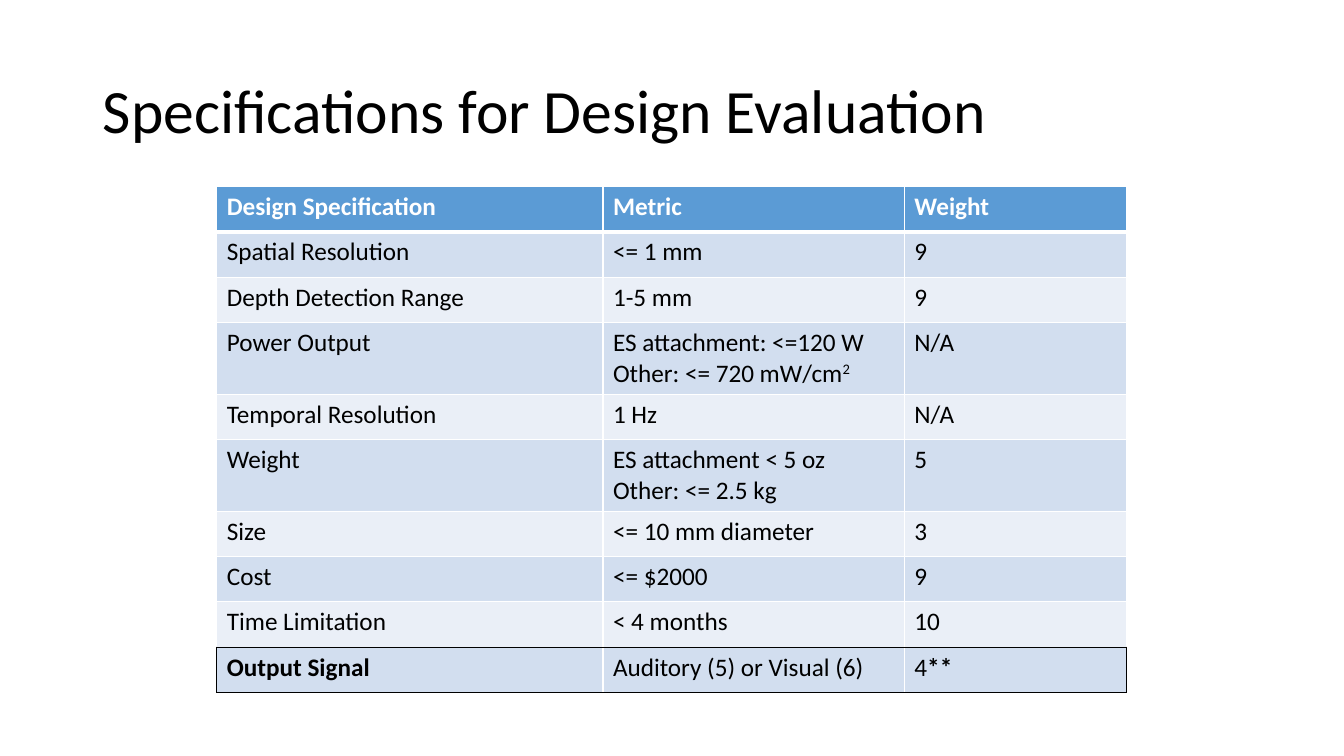
import pptx
import pptx.dml.color
import pptx.enum.text
import pptx.oxml
import pptx.oxml.ns
import pptx.util

EMU_PER_PX = 9144  # 100 px to the inch
FONT = "Calibri"
COLORS = {
    "text": "000000",
    "header_text": "FFFFFF",
    "header": "5B9BD5",
    "odd_row": "D2DEEF",
    "even_row": "EAEFF7",
    "grid": "FFFFFF",
    "highlight": "000000",
}
COLUMN_WIDTHS = [383, 299, 220]
ROW_HEIGHT = 45

# A cell is text with one paragraph per line, or a list of paragraphs;
# a paragraph is text or a list of (text, style) runs.
SPECIFICATIONS = [
    ["Design Specification", "Metric", "Weight"],
    ["Spatial Resolution", "<= 1 mm", "9"],
    ["Depth Detection Range", "1-5 mm", "9"],
    ["Power Output",
     ["ES attachment: <=120 W", [("Other: <= 720 mW/cm", ""), ("2", "superscript")]],
     "N/A"],
    ["Temporal Resolution", "1 Hz", "N/A"],
    ["Weight", "ES attachment < 5 oz\nOther: <= 2.5 kg", "5"],
    ["Size", "<= 10 mm diameter", "3"],
    ["Cost", "<= $2000", "9"],
    ["Time Limitation", "< 4 months", "10"],
    [[[("Output Signal", "bold")]], "Auditory (5) or Visual (6)",
     [[("4", ""), ("**", "bold")]]],
]


def px(length):
    return pptx.util.Emu(length * EMU_PER_PX)


def rgb(name):
    return pptx.dml.color.RGBColor.from_string(COLORS[name])


def format_font(font, size, color):
    font.name = FONT
    font.size = pptx.util.Pt(size)
    font.color.rgb = rgb(color)


def add_title(slide, text, left, top, width, height):
    title = slide.shapes.title
    title.left, title.top = px(left), px(top)
    title.width, title.height = px(width), px(height)
    title.text_frame.vertical_anchor = pptx.enum.text.MSO_ANCHOR.MIDDLE
    heading = title.text_frame.paragraphs[0]
    heading.text = text
    heading.alignment = pptx.enum.text.PP_ALIGN.LEFT
    heading.line_spacing = 0.9
    format_font(heading.font, 44, "text")


def fill_text(cell, content, is_header):
    lines = content.split("\n") if isinstance(content, str) else content
    for index, line in enumerate(lines):
        frame = cell.text_frame
        paragraph = frame.add_paragraph() if index else frame.paragraphs[0]
        format_font(paragraph.font, 18, "header_text" if is_header else "text")
        paragraph.font.bold = is_header
        for text, style in [(line, "")] if isinstance(line, str) else line:
            run = paragraph.add_run()
            run.text = text
            if style == "bold":
                run.font.bold = True
            elif style == "superscript":
                run.font._element.set("baseline", "30000")


def set_border(cell, side, color, points):
    cell._tc.get_or_add_tcPr().append(pptx.oxml.parse_xml(
        f'<a:ln{side} {pptx.oxml.ns.nsdecls("a")} w="{pptx.util.Pt(points)}">'
        f'<a:solidFill><a:srgbClr val="{COLORS[color]}"/></a:solidFill>'
        f'</a:ln{side}>'))


def set_borders(cell, row, column):
    last_row, last_column = len(SPECIFICATIONS) - 1, len(COLUMN_WIDTHS) - 1
    is_last = row == last_row
    highlighted = {
        "L": is_last and column == 0,
        "R": is_last and column == last_column,
        "T": is_last,
        "B": row >= last_row - 1,
    }
    for side, is_highlighted in highlighted.items():
        under_header = (row, side) in [(0, "B"), (1, "T")]
        set_border(cell, side, "highlight" if is_highlighted else "grid",
                   3 if under_header else 1)


def add_specification_table(slide, left, top):
    table = slide.shapes.add_table(
        len(SPECIFICATIONS), len(COLUMN_WIDTHS), px(left), px(top),
        px(sum(COLUMN_WIDTHS)), px(ROW_HEIGHT * len(SPECIFICATIONS))).table
    for column, width in enumerate(COLUMN_WIDTHS):
        table.columns[column].width = px(width)
    for row, specification in enumerate(SPECIFICATIONS):
        table.rows[row].height = px(ROW_HEIGHT)
        fill = "header" if row == 0 else "odd_row" if row % 2 else "even_row"
        for column, content in enumerate(specification):
            cell = table.cell(row, column)
            fill_text(cell, content, row == 0)
            set_borders(cell, row, column)  # borders precede the fill in the XML
            cell.fill.solid()
            cell.fill.fore_color.rgb = rgb(fill)


def main():
    presentation = pptx.Presentation()
    presentation.slide_width, presentation.slide_height = px(1333), px(750)
    title_only = presentation.slide_layouts[5]
    slide = presentation.slides.add_slide(title_only)

    # Heading
    add_title(slide, "Specifications for Design Evaluation", 92, 40, 1150, 145)
    # Specifications, with the output signal row outlined
    add_specification_table(slide, 215, 185)

    presentation.save("out.pptx")


if __name__ == "__main__":
    main()
